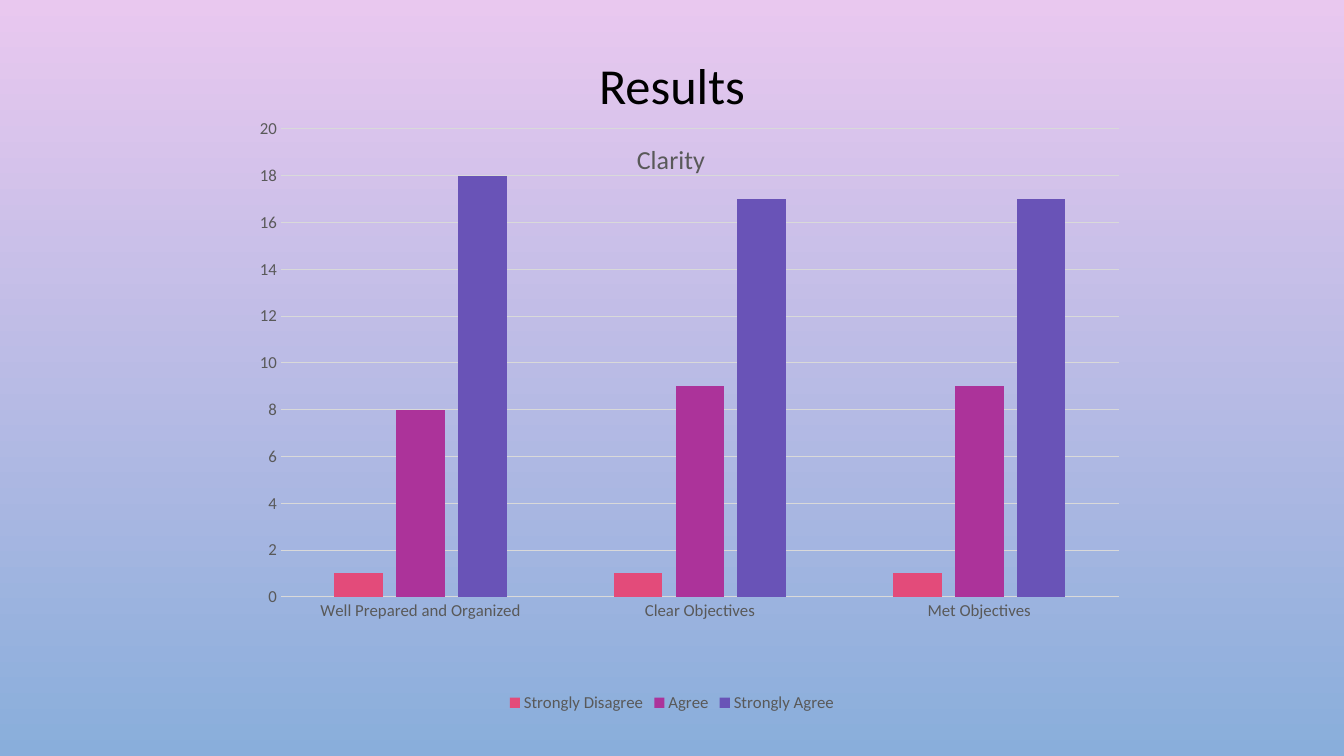
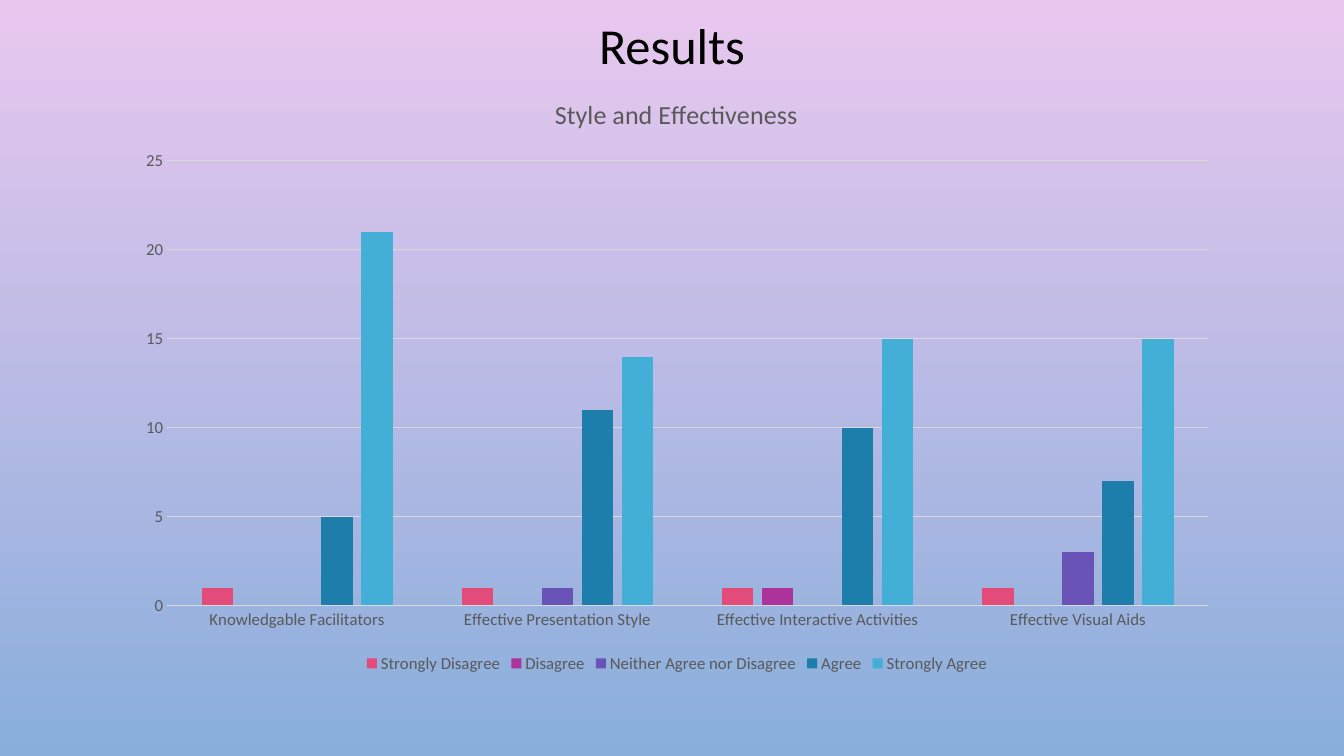
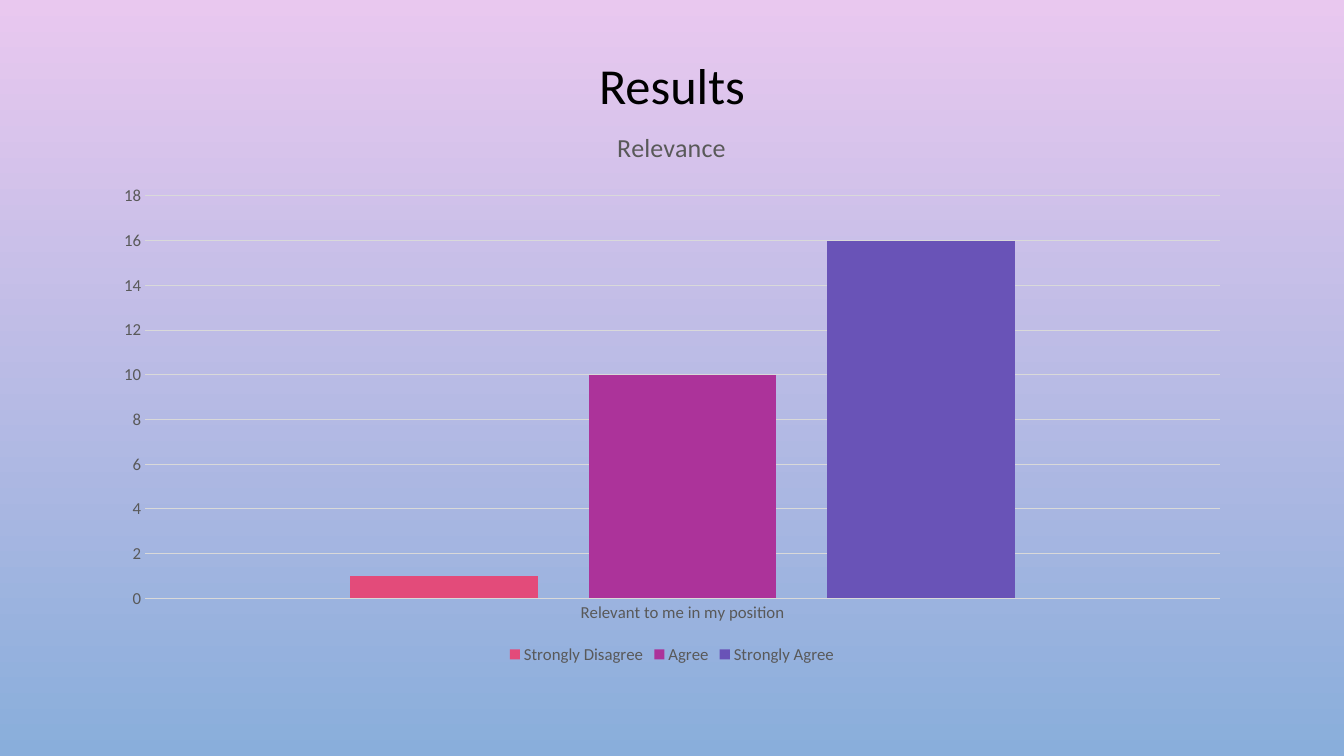
import pptx
import pptx.chart.data
import pptx.dml.color
import pptx.enum.chart
import pptx.enum.text
import pptx.oxml
import pptx.oxml.ns
import pptx.util

Pt = pptx.util.Pt
FONT = "Calibri"
COLORS = {
    "sky_top": "E9C8EF", "sky_bottom": "89AEDB", "title": "000000",
    "label": "595959", "grid": "D9D9D9", "pink": "E34B7A",
    "magenta": "AC339A", "violet": "6953B7", "teal": "1D7EAB", "cyan": "43AFD6",
}
SERIES_COLORS = ["pink", "magenta", "violet", "teal", "cyan"]

# Boxes are left, top, width, height on the slide, in points.
SLIDES = [
    {
        "heading_height": 126, "topic": "Clarity", "topic_at": (451.5, 97),
        "chart": (160, 85, 640, 427), "plot": (200.7, 92, 598.6, 334.4),
        "scale": (20, 2),
        "categories": ["Well Prepared and Organized", "Clear Objectives", "Met Objectives"],
        "series": [
            ("Strongly Disagree", [1, 1, 1]),
            ("Agree", [8, 9, 9]),
            ("Strongly Agree", [18, 17, 17]),
        ],
    },
    {
        "heading_height": 68.4, "topic": "Style and Effectiveness", "topic_at": (393, 65.7),
        "chart": (88.6, 56.9, 789.8, 427), "plot": (119.3, 115, 743.6, 317.5),
        "scale": (25, 5),
        "categories": ["Knowledgable Facilitators", "Effective Presentation Style",
                       "Effective Interactive Activities", "Effective Visual Aids"],
        "series": [
            ("Strongly Disagree", [1, 1, 1, 1]),
            ("Disagree", [None, None, 1, None]),
            ("Neither Agree nor Disagree", [None, 1, None, 3]),
            ("Agree", [5, 11, 10, 7]),
            ("Strongly Agree", [21, 14, 15, 15]),
        ],
    },
    {
        "heading_height": 126, "topic": "Relevance", "topic_at": (437.5, 88.6),
        "chart": (72, 78.5, 816, 399), "plot": (103.6, 140, 767.9, 287.5),
        "scale": (18, 2),
        "categories": ["Relevant to me in my position"],
        "series": [
            ("Strongly Disagree", [1]),
            ("Agree", [10]),
            ("Strongly Agree", [16]),
        ],
    },
]


def rgb(name):
    return pptx.dml.color.RGBColor.from_string(COLORS[name])


def style_font(font, size, color):
    font.name = FONT
    font.size = Pt(size)
    font.bold = False
    font.color.rgb = rgb(color)


def set_background(page):
    fill = page.background.fill
    fill.gradient()
    fill.gradient_angle = 270
    for stop, position, color in zip(fill.gradient_stops, (0, 1), ("sky_top", "sky_bottom")):
        stop.position = position
        stop.color.rgb = rgb(color)


def add_heading(s, height):
    sp = s.shapes.add_textbox(Pt(72), Pt(0), Pt(816), Pt(height))
    tf = sp.text_frame
    tf.word_wrap = True
    tf.vertical_anchor = pptx.enum.text.MSO_ANCHOR.MIDDLE
    p = tf.paragraphs[0]
    p.alignment = pptx.enum.text.PP_ALIGN.CENTER
    p.line_spacing = 0.9
    r = p.add_run()
    r.text = "Results"
    style_font(r.font, 36, "title")


def set_layout(element, box, chart_box, inner=False):
    """Place a chart part by hand; box is in slide points, as is chart_box."""
    left, top, width, height = chart_box
    fractions = [(box[0] - left) / width, (box[1] - top) / height]
    fractions += [size / whole for size, whole in zip(box[2:], (width, height))]
    parts = '<c:layoutTarget val="inner"/>' if inner else ""
    parts += '<c:xMode val="edge"/><c:yMode val="edge"/>'
    parts += "".join(f'<c:{tag} val="{value:.4f}"/>' for tag, value in zip("xywh", fractions))
    layout = pptx.oxml.parse_xml(
        f'<c:layout {pptx.oxml.ns.nsdecls("c")}><c:manualLayout>{parts}'
        "</c:manualLayout></c:layout>")
    old = element.find(pptx.oxml.ns.qn("c:layout"))
    if old is not None:
        element.remove(old)
    text = element.find(pptx.oxml.ns.qn("c:tx"))
    element.insert(0 if text is None else 1, layout)


def style_axes(chart, maximum, step):
    no_tick = pptx.enum.chart.XL_TICK_MARK.NONE
    for axis in (chart.category_axis, chart.value_axis):
        axis.major_tick_mark = axis.minor_tick_mark = no_tick
        style_font(axis.tick_labels.font, 12, "label")
    values = chart.value_axis
    values.minimum_scale, values.maximum_scale, values.major_unit = 0, maximum, step
    values.format.line.fill.background()
    for line in (chart.category_axis.format.line, values.major_gridlines.format.line):
        line.color.rgb = rgb("grid")
        line.width = Pt(0.75)


def add_results_chart(s, content):
    data = pptx.chart.data.CategoryChartData()
    data.categories = content["categories"]
    for name, values in content["series"]:
        data.add_series(name, values)
    chart = s.shapes.add_chart(
        pptx.enum.chart.XL_CHART_TYPE.COLUMN_CLUSTERED,
        *(Pt(v) for v in content["chart"]), data).chart
    style_font(chart.font, 10, "title")

    p = chart.chart_title.text_frame.paragraphs[0]
    r = p.add_run()
    r.text = content["topic"]
    style_font(r.font, 18.6, "label")
    title = chart.chart_title._element
    set_layout(title, content["topic_at"], content["chart"])
    chart.chart_title.include_in_layout = False

    chart.has_legend = True
    chart.legend.position = pptx.enum.chart.XL_LEGEND_POSITION.BOTTOM
    chart.legend.include_in_layout = False
    style_font(chart.legend.font, 12, "label")

    style_axes(chart, *content["scale"])
    plot = chart.plots[0]
    plot.vary_by_categories = False
    plot.gap_width = 219
    plot.overlap = -27
    for series, color in zip(plot.series, SERIES_COLORS):
        series.format.fill.solid()
        series.format.fill.fore_color.rgb = rgb(color)
    plot_area = chart._chartSpace.chart.plotArea
    set_layout(plot_area, content["plot"], content["chart"], inner=True)


def main():
    prs = pptx.Presentation()
    prs.slide_width, prs.slide_height = Pt(960), Pt(540)
    set_background(prs.slide_master)
    for content in SLIDES:
        s = prs.slides.add_slide(prs.slide_layouts[6])
        add_heading(s, content["heading_height"])
        add_results_chart(s, content)
    prs.save("out.pptx")


if __name__ == "__main__":
    main()
